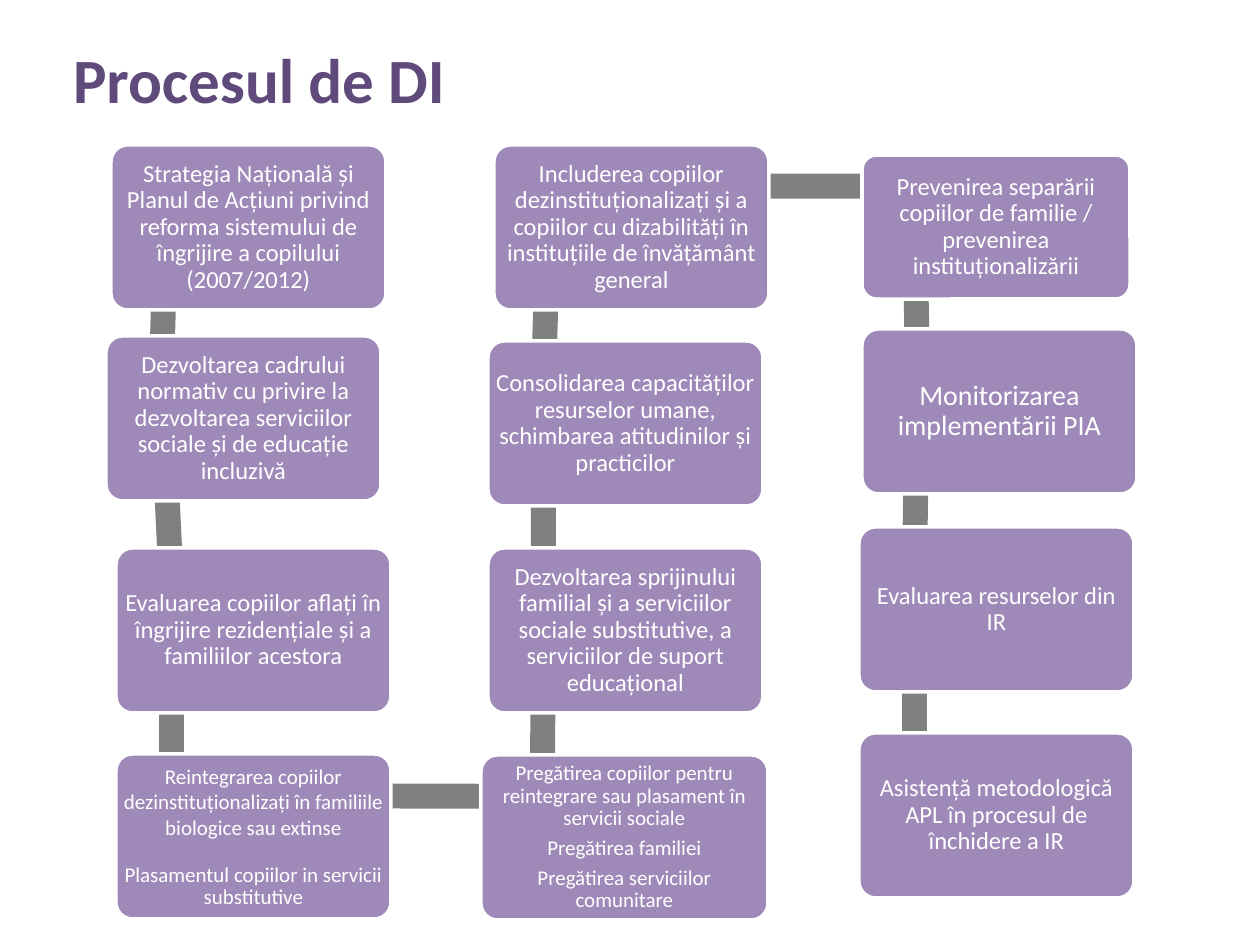
import itertools
import math

import pptx
import pptx.dml.color
import pptx.enum.shapes
import pptx.enum.text
import pptx.util

RGB = pptx.dml.color.RGBColor
SHAPE = pptx.enum.shapes.MSO_SHAPE
ALIGN = pptx.enum.text.PP_ALIGN
MIDDLE = pptx.enum.text.MSO_ANCHOR.MIDDLE
Pt = pptx.util.Pt

PLUM = RGB(0x60, 0x4A, 0x7B)
LILAC = RGB(0x9E, 0x89, 0xB8)
GRAY = RGB(0x80, 0x80, 0x80)
WHITE = RGB(0xFF, 0xFF, 0xFF)

FONT = "Calibri"
SCALE = 914400 / 126
WIDE, HIGH = 275, 165  # usual step box
THICK = 25
BACK, UP = 82, 41  # from a box's centre to the end of its link

# left, top, width, height, paragraphs, format, in the order of the process
STEPS = [
    (111, 145, WIDE, HIGH,
     ["Strategia Națională și Planul de Acțiuni privind reforma sistemului "
      "de îngrijire a copilului (2007/2012)"], {}),
    (106, 336, WIDE, HIGH,
     ["Dezvoltarea cadrului normativ cu privire la dezvoltarea serviciilor "
      "sociale și de educație incluzivă"], {}),
    (116, 548, WIDE, HIGH,
     ["Evaluarea copiilor aflați în îngrijire rezidențiale și a familiilor "
      "acestora"], {}),
    (116, 754, WIDE, HIGH,
     ["Reintegrarea copiilor dezinstituționalizați în familiile biologice "
      "sau extinse",
      "Plasamentul copiilor in servicii substitutive"],
     {"size": 12, "inset": 1, "lines": [1, 0.9], "gap": 14, "after": 0}),
    (481, 755, 287, HIGH,
     ["Pregătirea copiilor pentru reintegrare sau plasament în servicii "
      "sociale",
      "Pregătirea familiei",
      "Pregătirea serviciilor comunitare"], {"size": 12, "inset": 1, "after": 4}),
    (488, 548, WIDE, HIGH,
     ["Dezvoltarea sprijinului familial și a serviciilor sociale "
      "substitutive, a serviciilor de suport educațional"], {}),
    (488, 341, WIDE, HIGH,
     ["Consolidarea capacităților resurselor umane, schimbarea atitudinilor "
      "și practicilor"], {}),
    (494, 145, WIDE, HIGH,
     ["Includerea copiilor dezinstituționalizați și a copiilor cu "
      "dizabilități în instituțiile de învățământ general"], {}),
    (862, 155, 268, 144,
     ["Prevenirea separării copiilor de familie / prevenirea "
      "instituționalizării"], {}),
    (862, 329, WIDE, HIGH,
     ["Monitorizarea implementării PIA"], {"size": 16, "inset": 4}),
    (859, 527, WIDE, HIGH, ["Evaluarea resurselor din IR"], {}),
    (859, 733, WIDE, HIGH,
     ["Asistență metodologică APL în procesul de închidere a IR"], {}),
]


def px(n):
    return pptx.util.Emu(round(n * SCALE))


def write(shape, paras, size=14, color=WHITE, bold=False, align=ALIGN.CENTER,
          inset=3, lines=(0.9,), gap=0, after=5):
    """Fill a shape with paragraphs; lines repeats its last spacing."""
    frame = shape.text_frame
    frame.word_wrap = True
    frame.vertical_anchor = MIDDLE
    frame.margin_left = frame.margin_right = px(inset)
    frame.margin_top = frame.margin_bottom = px(inset)
    for i, text in enumerate(paras):
        para = frame.add_paragraph() if i else frame.paragraphs[0]
        para.alignment = align
        para.line_spacing = float(lines[min(i, len(lines) - 1)])
        para.space_before = Pt(gap if i else 0)
        para.space_after = Pt(after)
        run = para.add_run()
        run.text = text
        font = run.font
        font.name, font.size, font.bold = FONT, Pt(size), bold
        font.color.rgb = color


def block(slide, kind, left, top, width, height, fill):
    shape = slide.shapes.add_shape(kind, px(left), px(top), px(width), px(height))
    shape.shadow.inherit = False
    shape.fill.solid()
    shape.fill.fore_color.rgb = fill
    shape.line.fill.background()
    return shape


def anchor(step):
    left, top, width, height = step[:4]
    return left + width / 2 - BACK, top + height / 2 - UP


def link(slide, start, end):
    """Lay a bar, turned to run from one step's anchor to the next."""
    (x1, y1), (x2, y2) = anchor(start), anchor(end)
    size = math.hypot(x2 - x1, y2 - y1)
    bar = block(slide, SHAPE.RECTANGLE, (x1 + x2 - size) / 2,
                (y1 + y2 - THICK) / 2, size, THICK, GRAY)
    bar.rotation = math.degrees(math.atan2(y2 - y1, x2 - x1)) % 360


def box(slide, left, top, width, height, paras, style):
    shape = block(slide, SHAPE.ROUNDED_RECTANGLE, left, top, width, height, LILAC)
    shape.adjustments[0] = 0.1
    shape.line.color.rgb = WHITE
    shape.line.width = Pt(2)
    write(shape, paras, **style)


def head(slide, text):
    title = slide.shapes.title
    title.left, title.top = px(60), px(35)
    title.width, title.height = px(1134), px(87)
    write(title, [text], size=36, color=PLUM, bold=True, align=ALIGN.LEFT,
          inset=13, lines=[1], after=0)


def main():
    deck = pptx.Presentation()
    deck.slide_width, deck.slide_height = px(1260), px(945)
    slide = deck.slides.add_slide(deck.slide_layouts[5])
    head(slide, "Procesul de DI")
    for start, end in itertools.pairwise(STEPS):
        link(slide, start, end)
    for step in STEPS:
        box(slide, *step)
    deck.save("out.pptx")


if __name__ == "__main__":
    main()
